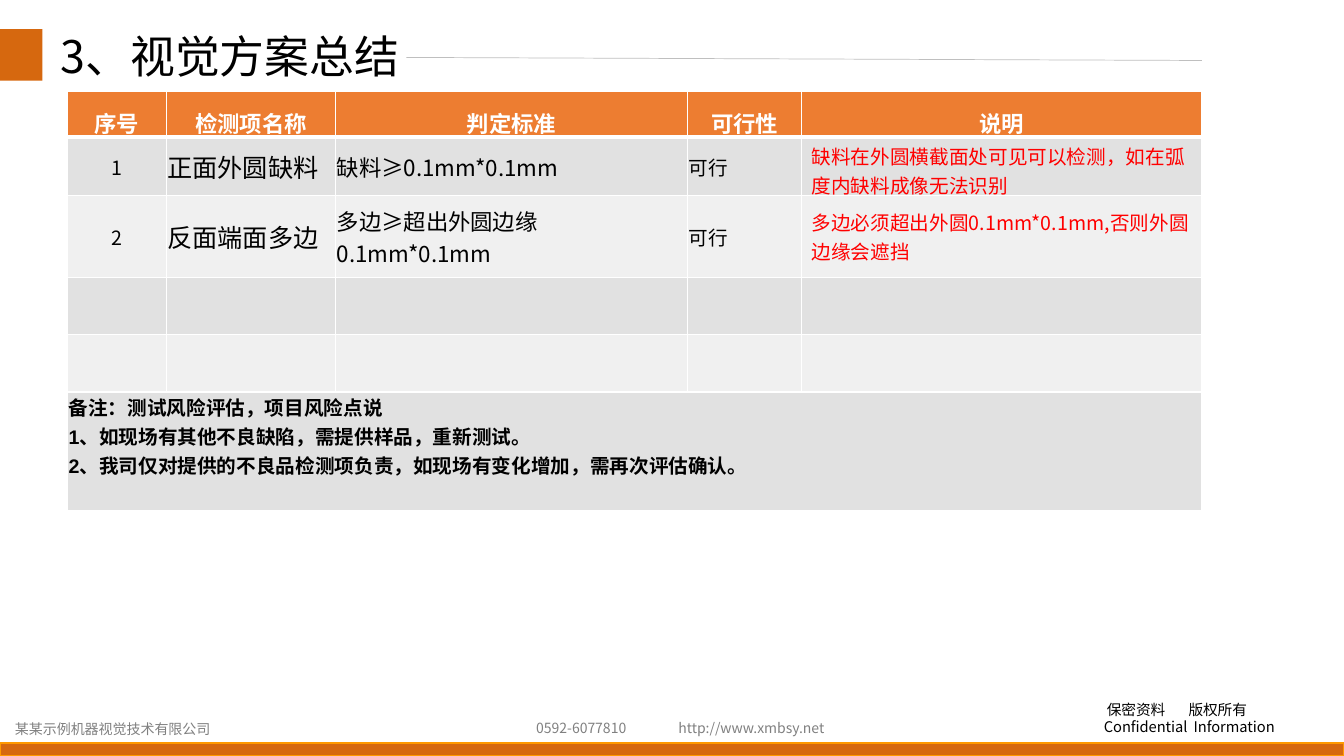
from dataclasses import dataclass

from lxml.etree import SubElement
from pptx import Presentation
from pptx.dml.color import RGBColor
from pptx.enum.shapes import MSO_CONNECTOR, MSO_SHAPE
from pptx.enum.text import MSO_ANCHOR, PP_ALIGN
from pptx.oxml.ns import qn
from pptx.util import Inches, Pt


@dataclass(frozen=True)
class Theme:
    font: str = "Noto Sans CJK SC"
    note_font: str = "Arial"
    black: str = "000000"
    white: str = "FFFFFF"
    red: str = "FF0000"
    gray: str = "808080"
    rule: str = "BFBFBF"
    orange: str = "D6680F"
    edge: str = "FF9900"
    header: str = "ED7D31"
    bands: tuple = ("E1E1E1", "F0F0F0")
    title: float = 32
    item: float = 18
    head: float = 16
    body: float = 14
    legal: float = 10.5
    footer: float = 10


THEME = Theme()
COLUMNS = (0.98, 1.68, 3.49, 1.13, 3.97)
ROWS = (0.45, 0.58, 0.81, 0.57, 0.57, 1.18)
HEADERS = ("序号", "检测项名称", "判定标准", "可行性", "说明")
CHECKS = (
    ("1", "正面外圆缺料", "缺料≥0.1mm*0.1mm", "可行",
     "缺料在外圆横截面处可见可以检测，如在弧度内缺料成像无法识别"),
    ("2", "反面端面多边", "多边≥超出外圆边缘0.1mm*0.1mm", "可行",
     "多边必须超出外圆0.1mm*0.1mm,否则外圆边缘会遮挡"),
)
NOTES = (
    "备注：测试风险评估，项目风险点说",
    "1、如现场有其他不良缺陷，需提供样品，重新测试。",
    "2、我司仅对提供的不良品检测项负责，如现场有变化增加，需再次评估确认。",
)
CHECK_STYLES = (
    dict(size=THEME.body, align=PP_ALIGN.CENTER),
    dict(size=THEME.item),
    dict(size=THEME.head),
    dict(size=THEME.body),
    dict(size=THEME.body, color=THEME.red),
)
FOOTERS = (
    ("某某示例机器视觉技术有限公司", 0.05, 7.1, 2.35),
    ("0592-6077810", 5.22, 7.09, 1.1),
    ("http://www.xmbsy.net", 6.63, 7.09, 1.67),
)


def apply(target, values):
    for name, value in values.items():
        setattr(target, name, value)


def rgb(color):
    return RGBColor.from_string(color)


def write(p, text, size, color=THEME.black, font=THEME.font, bold=False,
          align=PP_ALIGN.LEFT, spacing=1.0):
    apply(p, dict(alignment=align, line_spacing=spacing))
    r = p.add_run()
    r.text = text
    apply(r.font, dict(size=Pt(size), bold=bold, name=font))
    r.font.color.rgb = rgb(color)
    SubElement(r.font._element, qn("a:ea"), typeface=THEME.font)


def add_bar(s, left, top, width, height, edge=None):
    sp = s.shapes.add_shape(MSO_SHAPE.RECTANGLE, Inches(left), Inches(top),
                            Inches(width), Inches(height))
    sp.shadow.inherit = False
    sp.fill.solid()
    sp.fill.fore_color.rgb = rgb(THEME.orange)
    if edge:
        sp.line.color.rgb = rgb(edge)
        sp.line.width = Pt(1)
    else:
        sp.line.fill.background()


def add_text(s, left, top, width, height):
    tf = s.shapes.add_textbox(Inches(left), Inches(top), Inches(width),
                              Inches(height)).text_frame
    tf.word_wrap = True
    return tf


def add_title(s, text):
    title = s.shapes.title
    apply(title, dict(left=Inches(0.5), top=Inches(0.29),
                      width=Inches(3.98), height=Inches(0.71)))
    tf = title.text_frame
    apply(tf, dict(word_wrap=True, vertical_anchor=MSO_ANCHOR.TOP))
    write(tf.paragraphs[0], text, THEME.title, spacing=0.9)


def add_rule(s):
    line = s.shapes.add_connector(MSO_CONNECTOR.STRAIGHT, Inches(4.03),
                                  Inches(0.57), Inches(11.92), Inches(0.6))
    line.line.color.rgb = rgb(THEME.rule)
    line.line.width = Pt(0.5)
    SubElement(line._element.spPr, qn("a:effectLst"))


def add_legal(s):
    tf = add_text(s, 10.85, 6.9, 2.17, 0.45)
    lines = (("保密资料\t版权所有", 0.03, 0.81),
             ("Confidential\tInformation", 0, 0.89))
    for i, (text, indent, stop) in enumerate(lines):
        p = tf.add_paragraph() if i else tf.paragraphs[0]
        pPr = p._p.get_or_add_pPr()
        pPr.set("marL", str(Inches(indent)))
        tabs = SubElement(pPr, qn("a:tabLst"))
        SubElement(tabs, qn("a:tab"), pos=str(Inches(stop)), algn="l")
        write(p, text, THEME.legal)


def format_cell(cell, fill, top=1, bottom=1):
    tcPr = cell._tc.get_or_add_tcPr()
    for side, width in dict(L=1, R=1, T=top, B=bottom).items():
        ln = SubElement(tcPr, qn(f"a:ln{side}"), w=str(Pt(width)))
        solid = SubElement(ln, qn("a:solidFill"))
        SubElement(solid, qn("a:srgbClr"), val=THEME.white)
    cell.fill.solid()
    cell.fill.fore_color.rgb = rgb(fill)


def tighten(cell):
    edge = Inches(0.01)
    apply(cell, dict(margin_left=edge, margin_top=edge,
                     margin_right=edge, margin_bottom=0))


def add_summary_table(s):
    table = s.shapes.add_table(len(ROWS), len(COLUMNS), Inches(0.67),
                               Inches(0.91), Inches(sum(COLUMNS)),
                               Inches(sum(ROWS))).table
    for column, width in zip(table.columns, COLUMNS):
        column.width = Inches(width)
    for i, height in enumerate(ROWS):
        table.rows[i].height = Inches(height)
        fill = THEME.bands[(i - 1) % 2] if i else THEME.header
        for cell in table.rows[i].cells:
            format_cell(cell, fill, top=3 if i == 1 else 1,
                        bottom=1 if i else 3)

    for j, text in enumerate(HEADERS):
        write(table.cell(0, j).text_frame.paragraphs[0], text, THEME.head,
              THEME.white, bold=True, align=PP_ALIGN.CENTER, spacing=1.3)
    for i, check in enumerate(CHECKS, 1):
        for j, (text, style) in enumerate(zip(check, CHECK_STYLES)):
            cell = table.cell(i, j)
            cell.vertical_anchor = MSO_ANCHOR.MIDDLE
            if j < len(COLUMNS) - 1:
                tighten(cell)
            write(cell.text_frame.paragraphs[0], text, **style)

    last = len(ROWS) - 1
    note = table.cell(last, 0)
    note.merge(table.cell(last, len(COLUMNS) - 1))
    tighten(note)
    tf = note.text_frame
    for i, text in enumerate(NOTES):
        p = tf.add_paragraph() if i else tf.paragraphs[0]
        write(p, text, THEME.body, font=THEME.note_font, bold=True)


def main():
    prs = Presentation()
    apply(prs, dict(slide_width=Inches(13.33), slide_height=Inches(7.5)))
    s = prs.slides.add_slide(prs.slide_layouts.get_by_name("Title Only"))
    add_bar(s, 0, 7.37, 13.33, 0.13, THEME.edge)
    add_legal(s)
    for text, left, top, width in FOOTERS:
        tf = add_text(s, left, top, width, 0.27)
        write(tf.paragraphs[0], text, THEME.footer, THEME.gray)
    add_rule(s)
    add_bar(s, 0, 0.29, 0.42, 0.51)
    add_title(s, "3、视觉方案总结")
    add_summary_table(s)
    prs.save("out.pptx")


if __name__ == "__main__":
    main()
